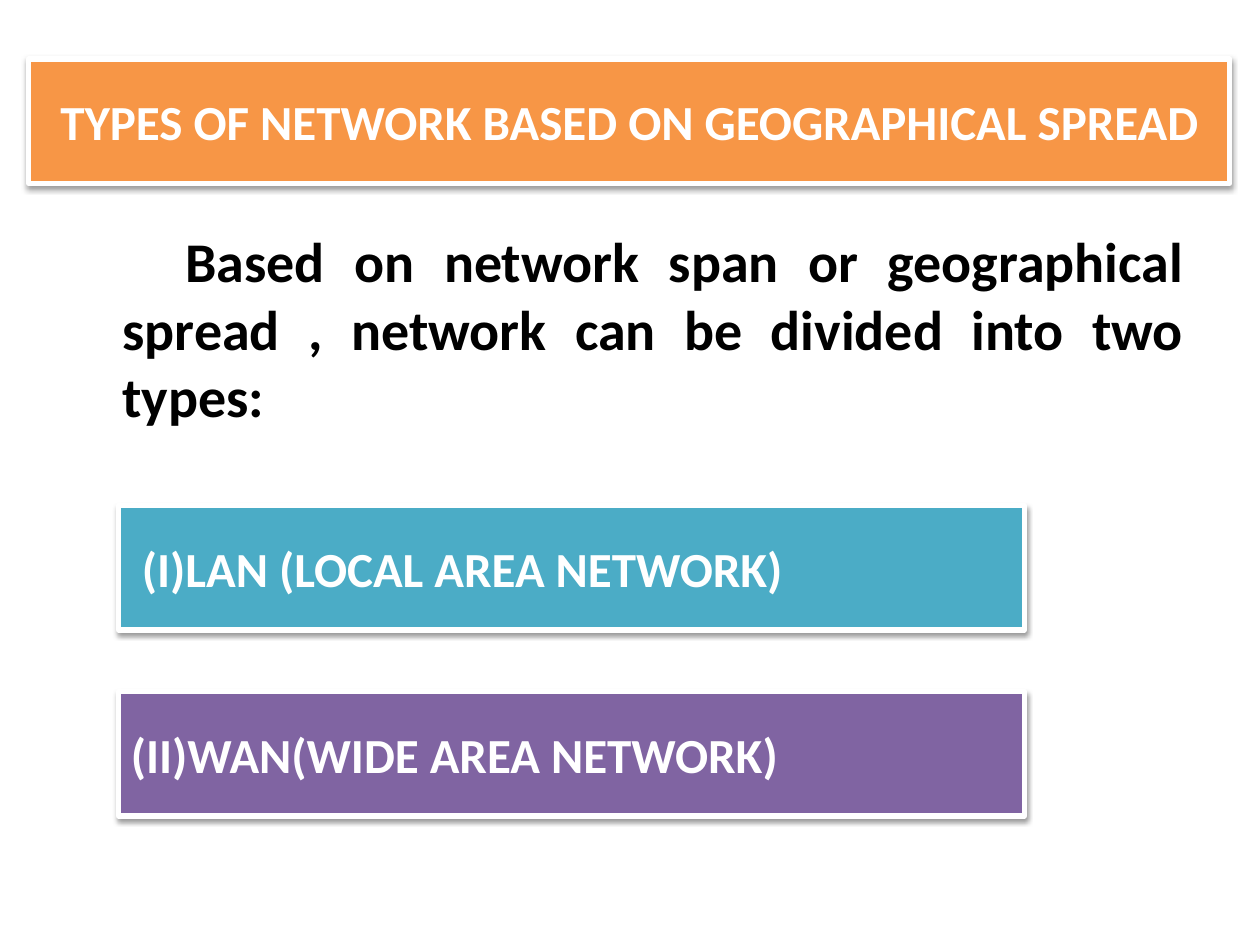
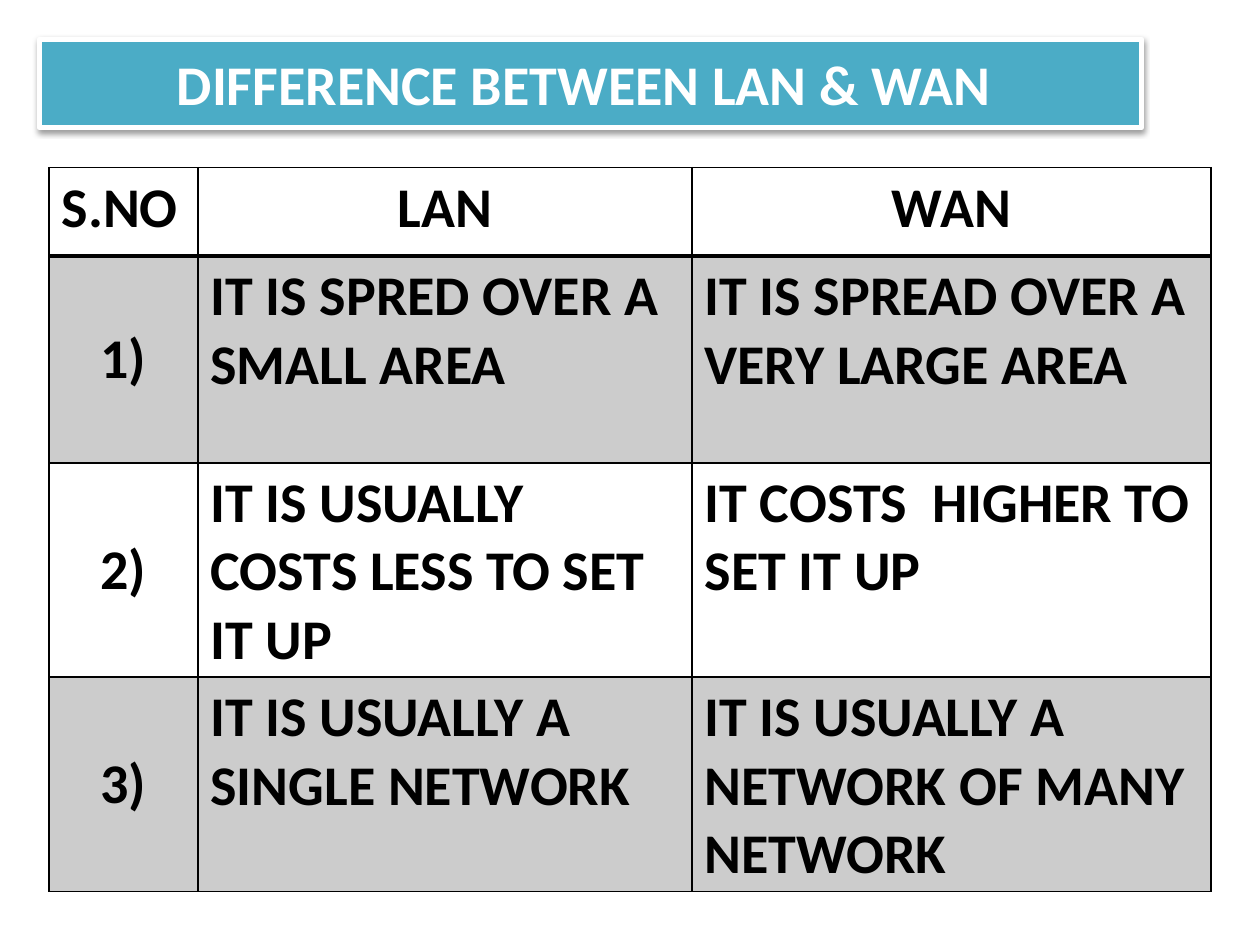
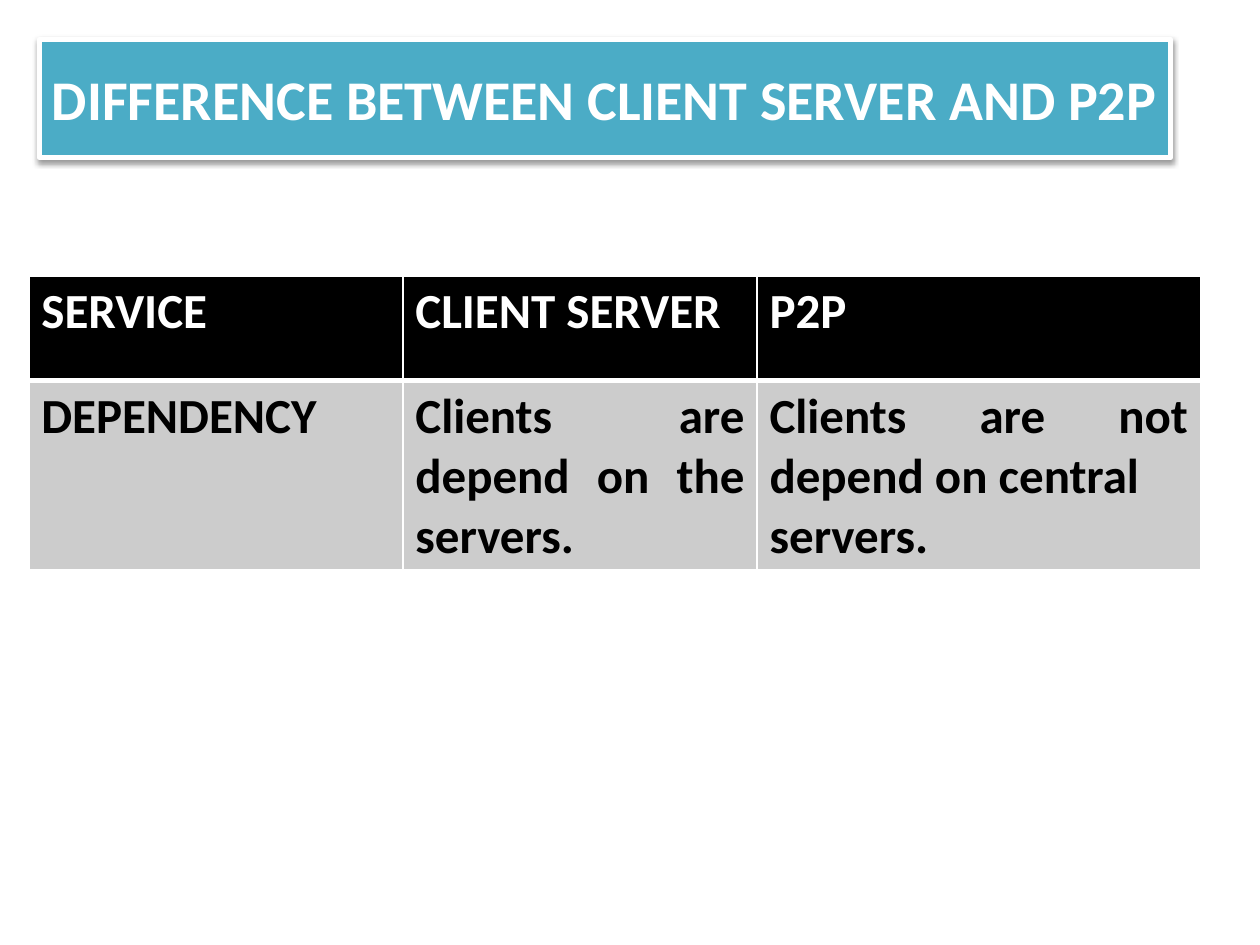
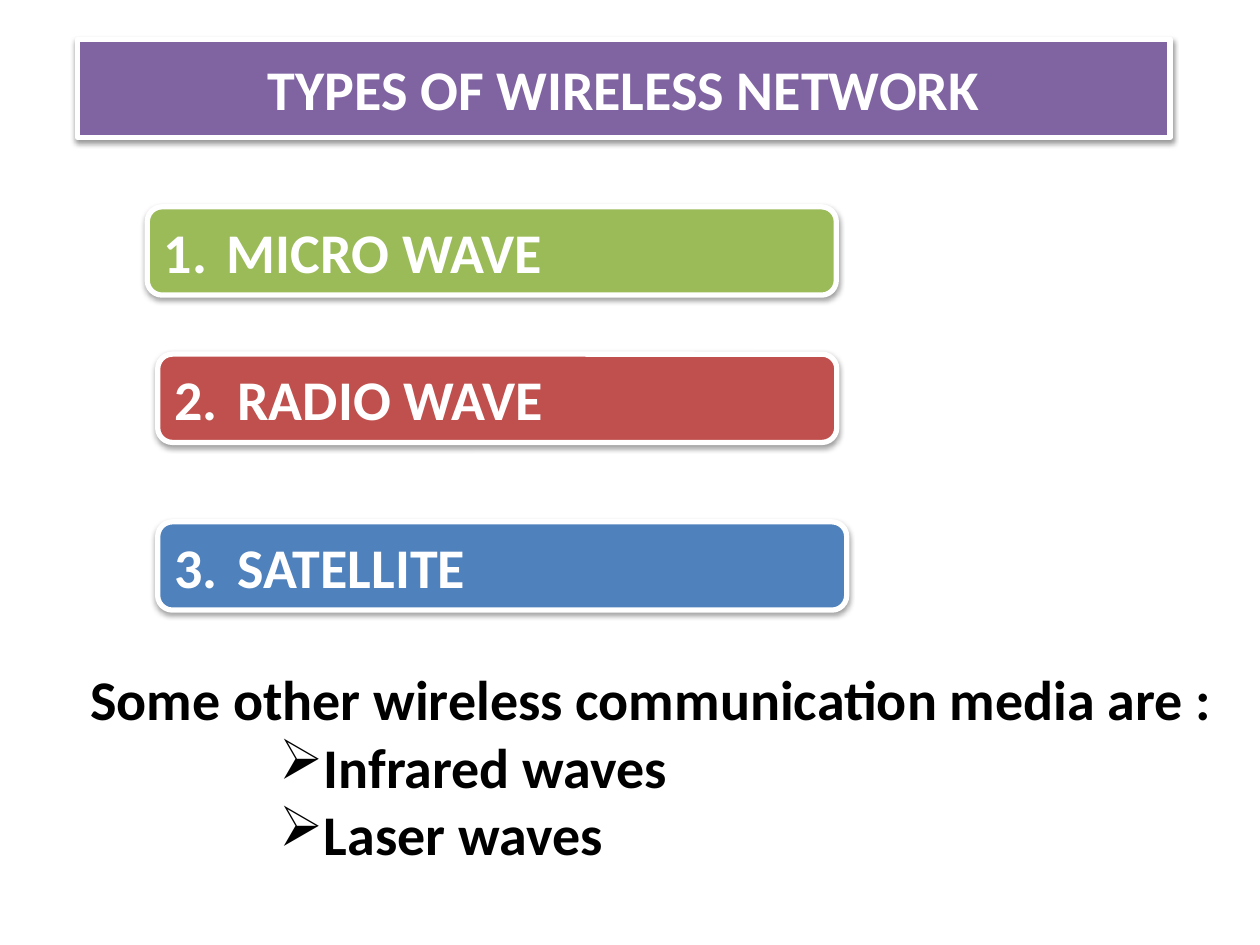
from lxml import etree
from pptx import Presentation
from pptx import util as u
from pptx.dml.color import RGBColor
from pptx.enum import shapes, text
from pptx.oxml.ns import qn

FONT = "Calibri"
COLORS = {
    "white": "FFFFFF",
    "black": "000000",
    "gray": "CCCCCC",
    "orange": "F79646",
    "aqua": "4BACC6",
    "purple": "8064A2",
    "green": "9BBB59",
    "red": "C0504D",
    "blue": "4F81BD",
}
RECTANGLE = shapes.MSO_SHAPE.RECTANGLE
ROUNDED = shapes.MSO_SHAPE.ROUNDED_RECTANGLE
LEFT = text.PP_ALIGN.LEFT
CENTER = text.PP_ALIGN.CENTER
JUSTIFY = text.PP_ALIGN.JUSTIFY
TOP = text.MSO_ANCHOR.TOP
MIDDLE = text.MSO_ANCHOR.MIDDLE


def rgb(name):
    return RGBColor.from_string(COLORS[name])


def add_node(parent, tag, **attributes):
    node = etree.SubElement(parent, qn(tag))
    for key, value in attributes.items():
        node.set(key, str(value))
    return node


def write(para, words, size, color, align=LEFT):
    para.alignment = align
    span = para.add_run()
    span.text = words
    span.font.name = FONT
    span.font.size = u.Pt(size)
    span.font.bold = True
    span.font.color.rgb = rgb(color)


def indent(para, margin, first_line):
    properties = para._p.get_or_add_pPr()
    properties.set("marL", str(u.Cm(margin)))
    properties.set("indent", str(u.Cm(first_line)))
    return properties


def add_shadow(box):
    box.shadow.inherit = False
    effects = box._element.spPr.find(qn("a:effectLst"))
    shadow = add_node(effects, "a:outerShdw", blurRad=40000, dist=20000,
                      dir=5400000, rotWithShape=0)
    color = add_node(shadow, "a:srgbClr", val=COLORS["black"])
    add_node(color, "a:alpha", val=38000)


def add_banner(page, place, words, color, size=32, align=CENTER, outline=RECTANGLE):
    box = page.shapes.add_shape(outline, *map(u.Cm, place))
    box.fill.solid()
    box.fill.fore_color.rgb = rgb(color)
    box.line.color.rgb = rgb("white")
    box.line.width = u.Pt(3)
    add_shadow(box)
    box.text_frame.vertical_anchor = MIDDLE
    write(box.text_frame.paragraphs[0], words, size, "white", align)


def add_text_box(page, place, wrap=True):
    box = page.shapes.add_textbox(*map(u.Cm, place))
    box.text_frame.word_wrap = wrap
    return box.text_frame


def set_borders(cell, color, bottom=1, top=1):
    properties = cell._tc.get_or_add_tcPr()
    widths = {"a:lnL": 1, "a:lnR": 1, "a:lnT": top, "a:lnB": bottom}
    for tag, width in widths.items():
        line = add_node(properties, tag, w=u.Pt(width))
        fill = add_node(line, "a:solidFill")
        add_node(fill, "a:srgbClr", val=COLORS[color])


def fill_cell(cell, words, size, color, fill, align=LEFT, anchor=TOP):
    if fill:
        cell.fill.solid()
        cell.fill.fore_color.rgb = rgb(fill)
    else:
        cell.fill.background()
    cell.vertical_anchor = anchor
    for index, line in enumerate(words.split("\n")):
        frame = cell.text_frame
        para = frame.add_paragraph() if index else frame.paragraphs[0]
        write(para, line, size, color, align)


def add_grid(page, left, top, columns, rows, border, header_line):
    place = map(u.Cm, (left, top, sum(columns), sum(rows)))
    table = page.shapes.add_table(len(rows), len(columns), *place).table
    table.first_row = table.horz_banding = False
    for column, width in zip(table.columns, columns):
        column.width = u.Cm(width)
    for index, height in enumerate(rows):
        table.rows[index].height = u.Cm(height)
        for cell in table.rows[index].cells:
            set_borders(cell, border,
                        bottom=header_line if index == 0 else 1,
                        top=header_line if index == 1 else 1)
    return table


def build_geographical_types(page):
    frame = add_text_box(page, (1.27, 4.45, 22.86, 5.28))
    para = frame.paragraphs[0]
    write(para, "\t\tBased on network span or geographical spread , "
          "network can be divided into two types:", 32, "black", JUSTIFY)
    indent(para, 0.95, -0.95)
    para.space_before = u.Pt(6.4)
    add_banner(page, (0.58, 1.19, 24.21, 2.51),
               "TYPES OF NETWORK BASED ON GEOGRAPHICAL SPREAD", "orange", 28)
    kinds = [(" (I)LAN (LOCAL AREA NETWORK)", "aqua"),
             ("(II)WAN(WIDE AREA NETWORK)", "purple")]
    for index, (words, color) in enumerate(kinds):
        place = (2.39, 10.19 + 3.75 * index, 18.26, 2.51)
        add_banner(page, place, words, color, 28, JUSTIFY)


def build_lan_wan(page):
    add_banner(page, (0.79, 0.79, 22.23, 1.78), "DIFFERENCE BETWEEN LAN & WAN ", "aqua")
    content = [
        ("S.NO", "LAN", "WAN"),
        ("1)", "IT IS SPRED OVER A SMALL AREA", "IT IS SPREAD OVER A VERY LARGE AREA"),
        ("2)", "IT IS USUALLY COSTS LESS TO SET IT UP", "IT COSTS  HIGHER TO SET IT UP"),
        ("3)", "IT IS USUALLY A SINGLE NETWORK", "IT IS USUALLY A NETWORK OF MANY NETWORK"),
    ]
    table = add_grid(page, 0.99, 3.38, (3, 9.96, 10.46), (1.78, 4.17, 4.17, 3.86),
                     "black", 2)
    for row, entries in enumerate(content):
        for column, words in enumerate(entries):
            centered = (row == 0) != (column == 0)
            numbered = row > 0 and column == 0
            fill_cell(table.cell(row, column), words, 32, "black",
                      "gray" if row % 2 else None,
                      CENTER if centered else LEFT,
                      MIDDLE if numbered else TOP)


def build_client_server(page):
    add_banner(page, (0.79, 0.79, 22.81, 2.39),
               "DIFFERENCE BETWEEN CLIENT SERVER AND P2P", "aqua")
    headings = ("SERVICE", "CLIENT SERVER", "P2P")
    answers = ("DEPENDENCY", "Clients are depend on the servers.",
               "Clients are not depend on central\nservers.")
    table = add_grid(page, 0.58, 5.56, (7.54, 7.14, 8.94), (2.11, 2.9), "white", 3)
    for column, (heading, answer) in enumerate(zip(headings, answers)):
        fill_cell(table.cell(0, column), heading, 28, "white", "black")
        fill_cell(table.cell(1, column), answer, 28, "black", "gray",
                  JUSTIFY if column else LEFT)


def build_wireless_types(page):
    add_banner(page, (1.57, 0.79, 22.02, 1.98), "TYPES OF WIRELESS NETWORK", "purple")
    waves = [
        (2.97, 4.17, 13.89, "1.\tMICRO WAVE", "green"),
        (3.18, 10.52, 13.89, "3.\tSATELLITE", "blue"),
        (3.18, 7.14, 13.69, "2.\tRADIO WAVE", "red"),
    ]
    for left, top, width, words, color in waves:
        add_banner(page, (left, top, width, 1.78), words, color, align=LEFT, outline=ROUNDED)
    frame = add_text_box(page, (1.57, 13.28, 23.34, 4.37), wrap=False)
    frame.auto_size = text.MSO_AUTO_SIZE.SHAPE_TO_FIT_TEXT
    write(frame.paragraphs[0], "Some other wireless communication media are :", 32, "black")
    for words in ("Infrared waves", "Laser waves"):
        para = frame.add_paragraph()
        para.level = 3
        write(para, words, 32, "black")
        add_node(indent(para, 4.6, -0.79), "a:buChar", char="➢")


def main():
    deck = Presentation()
    deck.slide_width = u.Cm(25.4)
    deck.slide_height = u.Cm(19.05)
    for build in (build_geographical_types, build_lan_wan,
                  build_client_server, build_wireless_types):
        build(deck.slides.add_slide(deck.slide_layouts[6]))
    deck.save("out.pptx")


if __name__ == "__main__":
    main()
